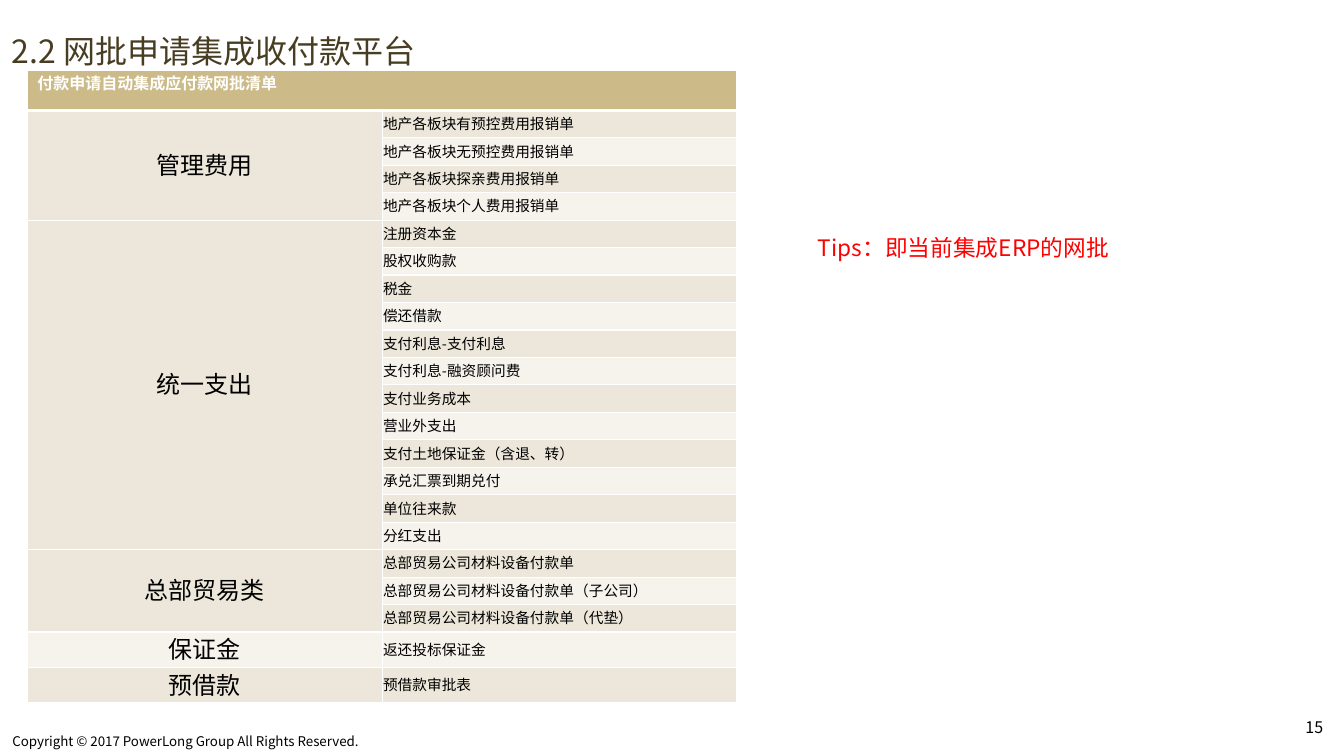
"""Build the slide listing the payment approval forms that feed the payment platform."""
import lxml.etree
import pptx
import pptx.dml.color
import pptx.enum.text
import pptx.oxml.ns
import pptx.util
from dataclasses import dataclass

Inches = pptx.util.Inches
ANCHOR = pptx.enum.text.MSO_ANCHOR
ALIGN = pptx.enum.text.PP_ALIGN

TITLE = "2.2 网批申请集成收付款平台"
TABLE_HEADING = "付款申请自动集成应付款网批清单"
GROUPS = [
    ("管理费用", [
        "地产各板块有预控费用报销单",
        "地产各板块无预控费用报销单",
        "地产各板块探亲费用报销单",
        "地产各板块个人费用报销单",
    ]),
    ("统一支出", [
        "注册资本金",
        "股权收购款",
        "税金",
        "偿还借款",
        "支付利息-支付利息",
        "支付利息-融资顾问费",
        "支付业务成本",
        "营业外支出",
        "支付土地保证金（含退、转）",
        "承兑汇票到期兑付",
        "单位往来款",
        "分红支出",
    ]),
    ("总部贸易类", [
        "总部贸易公司材料设备付款单",
        "总部贸易公司材料设备付款单（子公司）",
        "总部贸易公司材料设备付款单（代垫）",
    ]),
    ("保证金", ["返还投标保证金"]),
    ("预借款", ["预借款审批表"]),
]
TIP = "Tips：即当前集成ERP的网批"
COPYRIGHT = "Copyright © 2017 PowerLong Group All Rights Reserved."
PAGE_NUMBER = "15"

TABLE_LEFT, TABLE_TOP, COLUMN_WIDTH = 0.29, 0.73, 3.69
HEADING_HEIGHT, SINGLE_HEIGHT = 0.42, 0.37
LISTED_HEIGHT = 5.44


@dataclass(frozen=True)
class Theme:
    """Colours, fonts and type sizes of the slide."""
    font: str = "Noto Sans CJK SC"
    heading_font: str = "Arial"
    title: str = "473D22"
    text: str = "000000"
    tip: str = "FF0000"
    white: str = "FFFFFF"
    heading_fill: str = "CCBB88"
    bands: tuple = ("F6F3ED", "ECE7DA")
    title_size: int = 24
    group_size: int = 18
    tip_size: int = 17
    heading_size: int = 12
    item_size: int = 11
    number_size: int = 12
    copyright_size: int = 10


THEME = Theme()


def rgb(value):
    """Return a colour object for a hexadecimal value."""
    return pptx.dml.color.RGBColor.from_string(value)


def write_text(frame, text, *, size, color=THEME.text, font=THEME.font,
               bold=False, align=ALIGN.LEFT, spacing=0.8):
    """Write one formatted paragraph into a text frame."""
    paragraph = frame.paragraphs[0]
    paragraph.alignment = align
    paragraph.line_spacing = spacing
    run = paragraph.add_run()
    run.text = text
    run.font.size = pptx.util.Pt(size)
    run.font.bold = bold
    run.font.name = font
    run.font.color.rgb = rgb(color)
    east_asian = lxml.etree.SubElement(run.font._element, pptx.oxml.ns.qn("a:ea"))
    east_asian.set("typeface", THEME.font)


def set_margins(target, left, top, right, bottom):
    """Set the four inner margins of a cell or text frame."""
    target.margin_left, target.margin_top = Inches(left), Inches(top)
    target.margin_right, target.margin_bottom = Inches(right), Inches(bottom)


def add_text_box(slide, box, text, *, margins, anchor=ANCHOR.TOP, **text_format):
    """Add a wrapping text box holding one paragraph."""
    frame = slide.shapes.add_textbox(*map(Inches, box)).text_frame
    frame.word_wrap = True
    frame.vertical_anchor = anchor
    set_margins(frame, *margins)
    write_text(frame, text, **text_format)


def style_cell(cell, fill, bottom_width=1):
    """Give a cell white borders and a solid fill."""
    properties = cell._tc.get_or_add_tcPr()
    for side, width in (("L", 1), ("R", 1), ("T", 1), ("B", bottom_width)):
        line = lxml.etree.SubElement(properties, pptx.oxml.ns.qn("a:ln" + side))
        line.set("w", str(pptx.util.Pt(width)))
        solid = lxml.etree.SubElement(line, pptx.oxml.ns.qn("a:solidFill"))
        color = lxml.etree.SubElement(solid, pptx.oxml.ns.qn("a:srgbClr"))
        color.set("val", THEME.white)
    cell.fill.solid()
    cell.fill.fore_color.rgb = rgb(fill)


def add_form_table(slide):
    """Add the table of approval forms grouped by payment type."""
    listed = sum(len(items) for _, items in GROUPS if len(items) > 1)
    heights = [HEADING_HEIGHT]
    for _, items in GROUPS:
        height = LISTED_HEIGHT / listed if len(items) > 1 else SINGLE_HEIGHT
        heights += [height] * len(items)
    table = slide.shapes.add_table(
        len(heights), 2, Inches(TABLE_LEFT), Inches(TABLE_TOP),
        Inches(2 * COLUMN_WIDTH), Inches(sum(heights))).table
    for column in table.columns:
        column.width = Inches(COLUMN_WIDTH)

    for index, height in enumerate(heights):
        table.rows[index].height = Inches(height)
        for cell in table.rows[index].cells:
            if index == 0:
                style_cell(cell, THEME.heading_fill, bottom_width=3)
            else:
                style_cell(cell, THEME.bands[index % 2])
                set_margins(cell, 0.01, 0.01, 0.01, 0)
                cell.vertical_anchor = ANCHOR.MIDDLE

    heading = table.cell(0, 0)
    heading.merge(table.cell(0, 1))
    write_text(heading.text_frame, TABLE_HEADING, size=THEME.heading_size,
               color=THEME.white, font=THEME.heading_font, bold=True)
    first = 1
    for name, items in GROUPS:
        group = table.cell(first, 0)
        if len(items) > 1:
            group.merge(table.cell(first + len(items) - 1, 0))
        write_text(group.text_frame, name, size=THEME.group_size, align=ALIGN.CENTER)
        for row, item in enumerate(items, first):
            write_text(table.cell(row, 1).text_frame, item, size=THEME.item_size)
        first += len(items)


def main():
    """Create the presentation and save it."""
    presentation = pptx.Presentation()
    presentation.slide_width, presentation.slide_height = Inches(14), Inches(7.88)
    slide = presentation.slides.add_slide(presentation.slide_layouts[6])
    add_text_box(slide, (0, 7.61, 4.93, 0.26), COPYRIGHT,
                 margins=(0.13, 0.06, 0.13, 0.06), size=THEME.copyright_size)
    add_text_box(slide, (13.5, 7.47, 0.5, 0.41), PAGE_NUMBER,
                 margins=(0.1, 0.05, 0.1, 0.05), size=THEME.number_size)
    add_text_box(slide, (0, 0, 14, 0.85), TITLE, margins=(0.12, 0.06, 0.12, 0.06),
                 anchor=ANCHOR.MIDDLE, size=THEME.title_size, color=THEME.title,
                 spacing=1.5)
    add_form_table(slide)
    add_text_box(slide, (8.41, 2, 3.84, 1.21), TIP, margins=(0.11, 0.05, 0.11, 0.05),
                 anchor=ANCHOR.MIDDLE, size=THEME.tip_size, color=THEME.tip)
    presentation.save("out.pptx")


if __name__ == "__main__":
    main()
